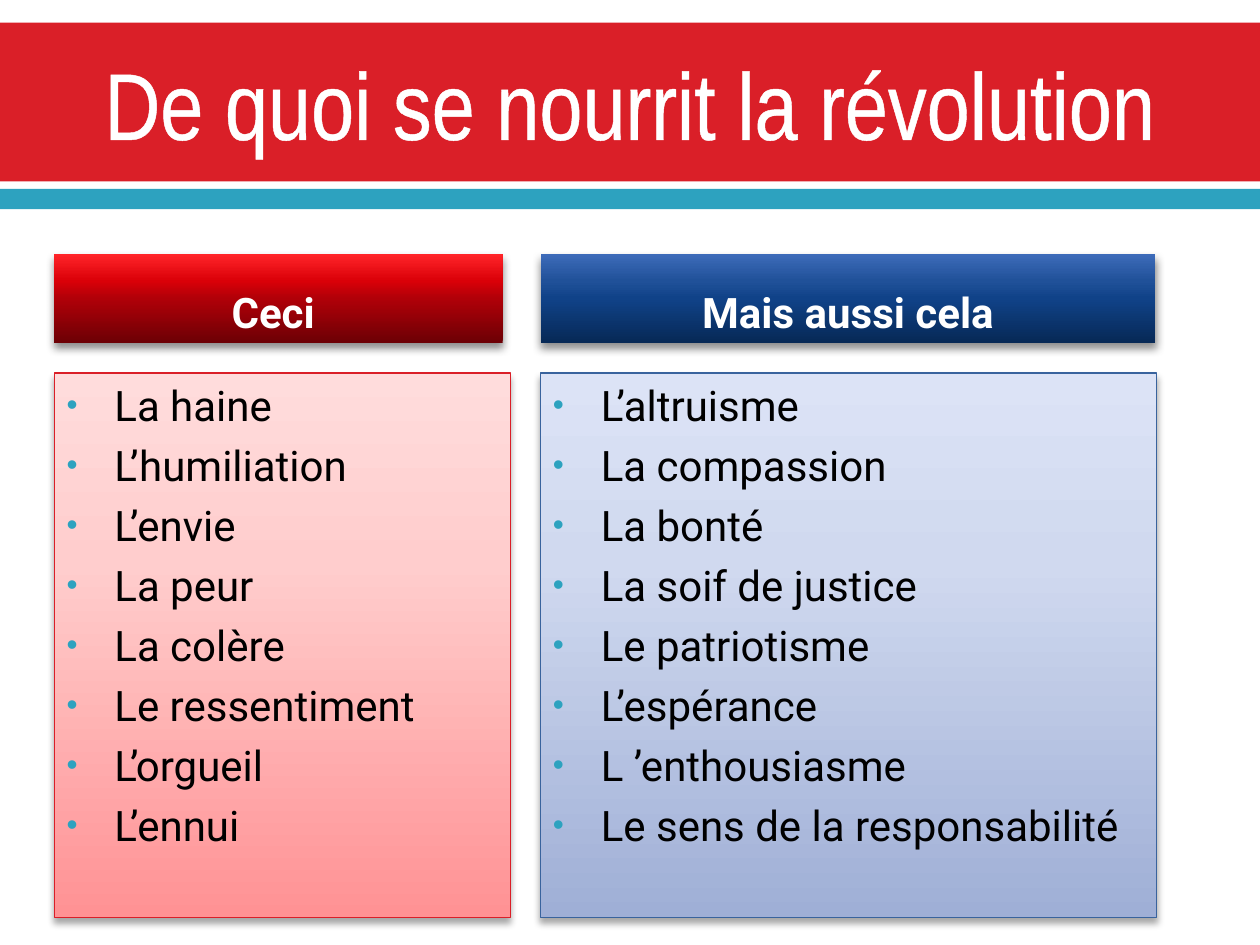
from dataclasses import dataclass

from lxml import etree
from pptx import Presentation
from pptx.dml.color import RGBColor
from pptx.enum.shapes import MSO_SHAPE
from pptx.enum.text import MSO_ANCHOR, PP_ALIGN
from pptx.oxml.ns import qn
from pptx.util import Inches, Pt

RECTANGLE = MSO_SHAPE.RECTANGLE
TOP, MIDDLE, BOTTOM = MSO_ANCHOR.TOP, MSO_ANCHOR.MIDDLE, MSO_ANCHOR.BOTTOM
LEFT, CENTER = PP_ALIGN.LEFT, PP_ALIGN.CENTER


@dataclass(frozen=True)
class Theme:
    red: str = "DA1F28"
    teal: str = "2DA2BF"
    blue: str = "39639D"
    white: str = "FFFFFF"
    black: str = "000000"
    title_font: str = "Arial Narrow"
    body_font: str = "Roboto"
    title_size: float = 54
    body_size: float = 24
    space_before: float = 5.5
    red_header: tuple = ((0, "6D0005"), (50, "B00008"), (70, "DA0008"), (100, "FF2429"))
    red_panel: tuple = ((0, "FF9294"), (65, "FFCDCD"), (100, "FFDCDC"))
    blue_header: tuple = ((0, "072956"), (50, "104288"), (70, "205199"), (100, "3D6BB9"))
    blue_panel: tuple = ((0, "9FAFD6"), (65, "D0D9EF"), (100, "DCE3F6"))


theme = Theme()


def add_node(parent, tag, **attributes):
    return etree.SubElement(parent, qn(tag), {k: str(v) for k, v in attributes.items()})


def add_gradient_box(slide, box, stops, shadow_alpha, shadow_blur):
    shape = slide.shapes.add_shape(RECTANGLE, *map(Inches, box))
    shape.line.fill.background()
    shape.fill.gradient()
    shape.fill.gradient_angle = 90
    properties = shape._element.spPr
    stop_list = properties.find(qn("a:gradFill")).find(qn("a:gsLst"))
    for default_stop in list(stop_list):
        stop_list.remove(default_stop)
    for position, color in stops:
        stop = add_node(stop_list, "a:gs", pos=position * 1000)
        add_node(stop, "a:srgbClr", val=color)
    shape.shadow.inherit = False
    shadow = add_node(properties.find(qn("a:effectLst")), "a:outerShdw",
                      blurRad=Pt(shadow_blur), dist=Pt(3), dir=90 * 60000, rotWithShape=0)
    shadow_color = add_node(shadow, "a:srgbClr", val=theme.black)
    add_node(shadow_color, "a:alpha", val=shadow_alpha * 1000)
    return shape


presentation = Presentation()
presentation.slide_width = Inches(10)
presentation.slide_height = Inches(7.5)
slide = presentation.slides.add_slide(presentation.slide_layouts[6])

for top, height, color in ((0.18, 1.26, theme.red), (1.5, 0.16, theme.teal)):
    band = slide.shapes.add_shape(RECTANGLE, 0, Inches(top), Inches(10), Inches(height))
    band.fill.solid()
    band.fill.fore_color.rgb = RGBColor.from_string(color)
    band.line.fill.background()
    band.shadow.inherit = False

title = slide.shapes.add_textbox(Inches(0.5), Inches(0.2), Inches(9), Inches(1.22))
title_frame = title.text_frame
title_frame.word_wrap = True
title_frame.vertical_anchor = MIDDLE
title_frame.text = "De quoi se nourrit la révolution"
title_paragraph = title_frame.paragraphs[0]
title_paragraph.alignment = CENTER
title_run = title_paragraph.runs[0]
title_run.font.name = theme.title_font
title_run.font.size = Pt(theme.title_size)
title_run.font.color.rgb = RGBColor.from_string(theme.white)
outline = etree.Element(qn("a:ln"), w=str(Pt(1.1)))
add_node(add_node(outline, "a:solidFill"), "a:srgbClr", val=theme.white)
title_run._r.get_or_add_rPr().insert(0, outline)

columns = (
    (0.43, 3.56, 3.62, "Ceci ", theme.red_header, theme.red_panel, theme.red,
     ("La haine", "L’humiliation", "L’envie", "La peur", "La colère",
      "Le ressentiment", "L’orgueil", "L’ennui")),
    (4.29, 4.88, 4.89, "Mais aussi cela", theme.blue_header, theme.blue_panel, theme.blue,
     ("L’altruisme", "La compassion", "La bonté", "La soif de justice", "Le patriotisme",
      "L’espérance", "L ’enthousiasme", "Le sens de la responsabilité")),
)

for left, header_width, panel_width, heading, header_stops, panel_stops, border, items in columns:
    header = add_gradient_box(slide, (left, 2.02, header_width, 0.7), header_stops, 45, 5)
    panel = add_gradient_box(slide, (left, 2.96, panel_width, 4.32), panel_stops, 35, 4)
    panel.line.color.rgb = RGBColor.from_string(border)
    panel.line.width = Pt(0.75)

    for box, lines, anchor, alignment, color, is_heading in (
        (header, (heading,), BOTTOM, CENTER, theme.white, True),
        (panel, items, TOP, LEFT, theme.black, False),
    ):
        frame = box.text_frame
        frame.word_wrap = True
        frame.vertical_anchor = anchor
        frame.text = "\n".join(lines)
        for paragraph in frame.paragraphs:
            paragraph.alignment = alignment
            paragraph.space_before = Pt(theme.space_before)
            font = paragraph.runs[0].font
            font.name = theme.body_font
            font.size = Pt(theme.body_size)
            font.bold = is_heading
            font.color.rgb = RGBColor.from_string(color)
            if not is_heading:
                bullet = paragraph._p.get_or_add_pPr()
                bullet.set("marL", str(Inches(0.38)))
                bullet.set("indent", str(-Inches(0.38)))
                add_node(add_node(bullet, "a:buClr"), "a:srgbClr", val=theme.teal)
                add_node(bullet, "a:buSzPct", val=75000)
                add_node(bullet, "a:buFont", typeface="Arial")
                add_node(bullet, "a:buChar", char="•")

presentation.save("out.pptx")
